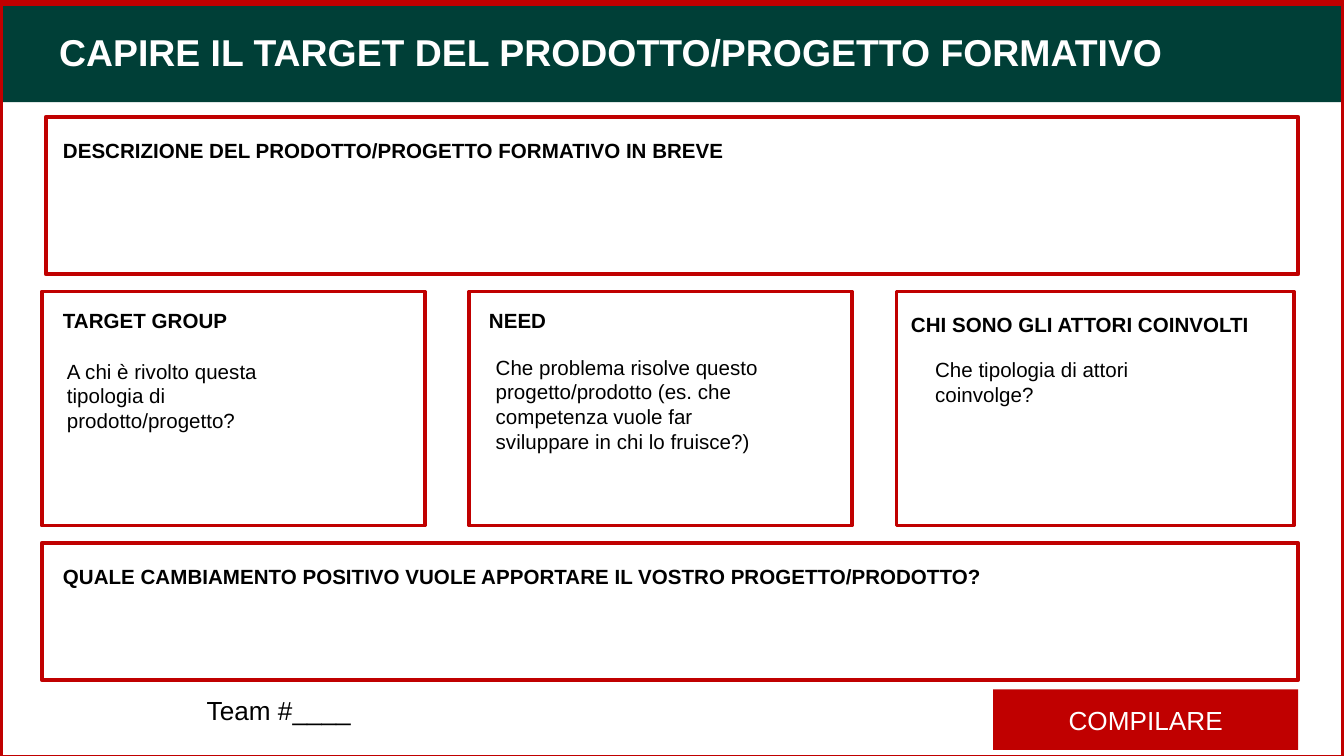
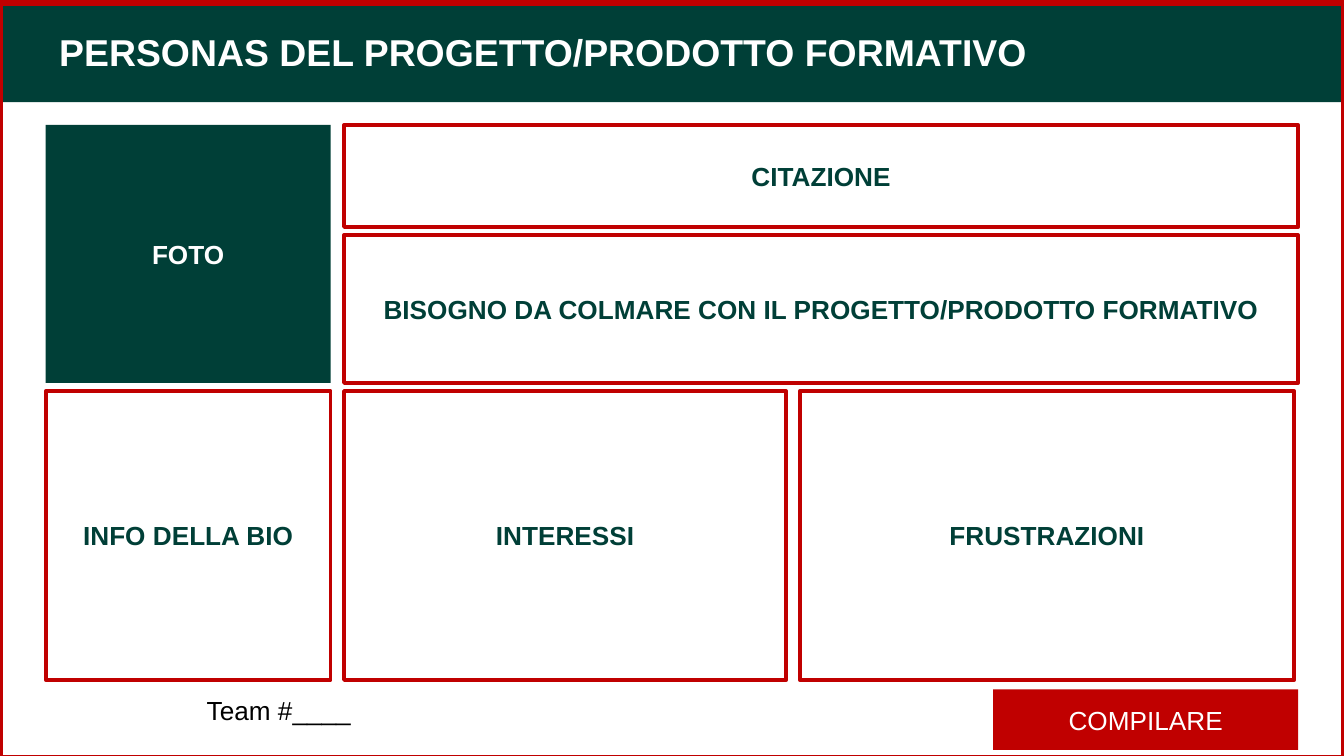
from pptx import Presentation
from pptx.dml.color import RGBColor
from pptx.enum import shapes, text
from pptx.util import Inches, Pt

COLORS = {"green": "003F37", "red": "C00000", "white": "FFFFFF", "black": "000000"}
FONT = "Arial"
LEFT, RIGHT = 0.34, 9.66
TITLES = [
    "CAPIRE IL TARGET DEL PRODOTTO/PROGETTO FORMATIVO",
    "PERSONAS DEL PROGETTO/PRODOTTO FORMATIVO",
]


def write(box, words, size, color, bold=False, align="LEFT", anchor="MIDDLE", inset=0.05):
    frame = box.text_frame
    frame.text = words
    frame.word_wrap = True
    frame.auto_size = text.MSO_AUTO_SIZE.NONE
    frame.vertical_anchor = text.MSO_ANCHOR[anchor]
    frame.margin_left = frame.margin_right = Inches(0.1)
    frame.margin_top = frame.margin_bottom = Inches(inset)
    para = frame.paragraphs[0]
    para.alignment = text.PP_ALIGN[align]
    font = para.runs[0].font
    font.name, font.size, font.bold = FONT, Pt(size), bold
    font.color.rgb = RGBColor.from_string(COLORS[color])


def add_box(page, place, fill=None, line=2):
    box = page.shapes.add_shape(shapes.MSO_SHAPE.RECTANGLE, *map(Inches, place))
    box.shadow.inherit = False
    if fill:
        box.fill.solid()
        box.fill.fore_color.rgb = RGBColor.from_string(COLORS[fill])
        box.line.fill.background()
    else:
        box.fill.background()
        box.line.color.rgb = RGBColor.from_string(COLORS["red"])
        box.line.width = Pt(line)
    return box


deck = Presentation()
deck.slide_width = Inches(10)
deck.slide_height = Inches(10) * 9 // 16

pages = []
for heading in TITLES:
    page = deck.slides.add_slide(deck.slide_layouts[5])
    title = page.shapes.title
    title.left, title.top = Inches(LEFT), Inches(0.07)
    title.width, title.height = Inches(RIGHT - LEFT), Inches(0.63)
    write(title, heading, 20, "white", bold=True, inset=0.1)
    band = add_box(page, (0, 0, 10, 0.76), fill="green")
    title.element.addprevious(band.element)
    add_box(page, (0, 0.02, 10, 5.62), line=3)
    button = add_box(page, (7.39, 5.13, 2.27, 0.45), fill="red")
    write(button, "COMPILARE", 14, "white", align="CENTER")
    team = page.shapes.add_textbox(*map(Inches, (1.44, 5.06, 2.27, 0.45)))
    write(team, "Team #____", 14, "black")
    pages.append(page)

target_page, persona_page = pages

target_cards = [
    (LEFT, 0.87, RIGHT - LEFT, 1.17),
    (0.31, 2.17, 2.85, 1.74),
    (3.49, 2.17, 2.85, 1.74),
    (6.67, 2.17, 2.96, 1.74),
    (0.31, 4.04, RIGHT - 0.31, 1.02),
]
for place in target_cards:
    add_box(target_page, place)

labels = [
    ("DESCRIZIONE DEL PRODOTTO/PROGETTO FORMATIVO IN BREVE", 0.37, 0.98, 5.15),
    ("TARGET GROUP", 0.37, 2.24, 1.44),
    ("NEED", 3.54, 2.24, 0.63),
    ("CHI SONO GLI ATTORI COINVOLTI", 6.68, 2.27, 2.74),
    ("QUALE CAMBIAMENTO POSITIVO VUOLE APPORTARE IL VOSTRO PROGETTO/PRODOTTO?",
     0.37, 4.15, 7.11),
]
for words, left, top, width in labels:
    label = target_page.shapes.add_textbox(*map(Inches, (left, top, width, 0.29)))
    write(label, words, 11, "black", bold=True, anchor="TOP")

questions = [
    ("A chi è rivolto questa tipologia di prodotto/progetto?", 0.4, 2.62, 0.66),
    ("Che problema risolve questo progetto/prodotto (es. che competenza vuole far "
     "sviluppare in chi lo fruisce?)", 3.59, 2.59, 0.84),
    ("Che tipologia di attori coinvolge?", 6.86, 2.61, 0.47),
]
for words, left, top, height in questions:
    question = target_page.shapes.add_textbox(*map(Inches, (left, top, 2.2, height)))
    write(question, words, 11, "black", anchor="TOP")

photo = add_box(persona_page, (LEFT, 0.93, 2.12, 1.92), fill="green")
write(photo, "FOTO", 14, "white", bold=True, align="CENTER")

persona_cards = [
    ("CITAZIONE", 2.56, 0.93, 7.1, 0.76),
    ("BISOGNO DA COLMARE CON IL PROGETTO/PRODOTTO FORMATIVO", 2.56, 1.75, 7.1, 1.1),
    ("INFO DELLA BIO", LEFT, 2.91, 2.12, 2.15),
    ("INTERESSI", 2.56, 2.91, 3.29, 2.15),
    ("FRUSTRAZIONI", 5.95, 2.91, 3.68, 2.15),
]
for words, *place in persona_cards:
    card = add_box(persona_page, place)
    write(card, words, 14, "green", bold=True, align="CENTER")

deck.save("out.pptx")
